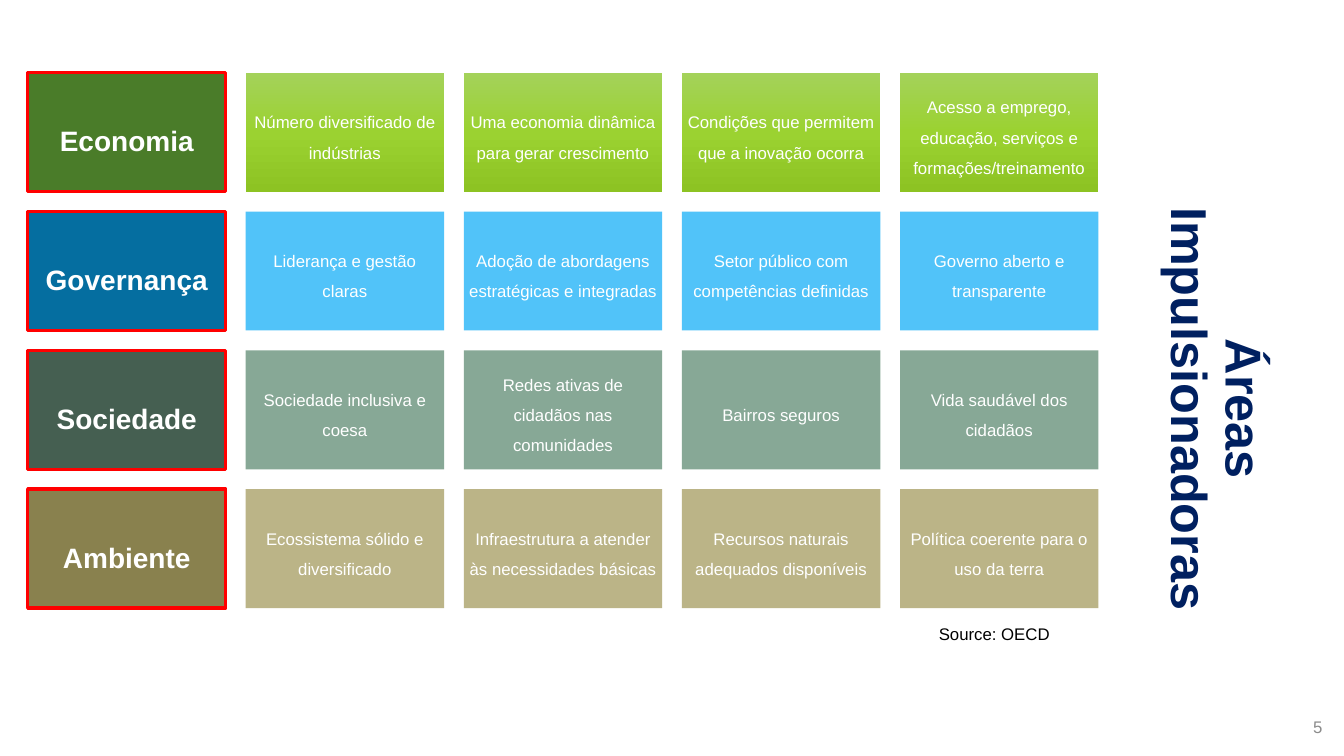
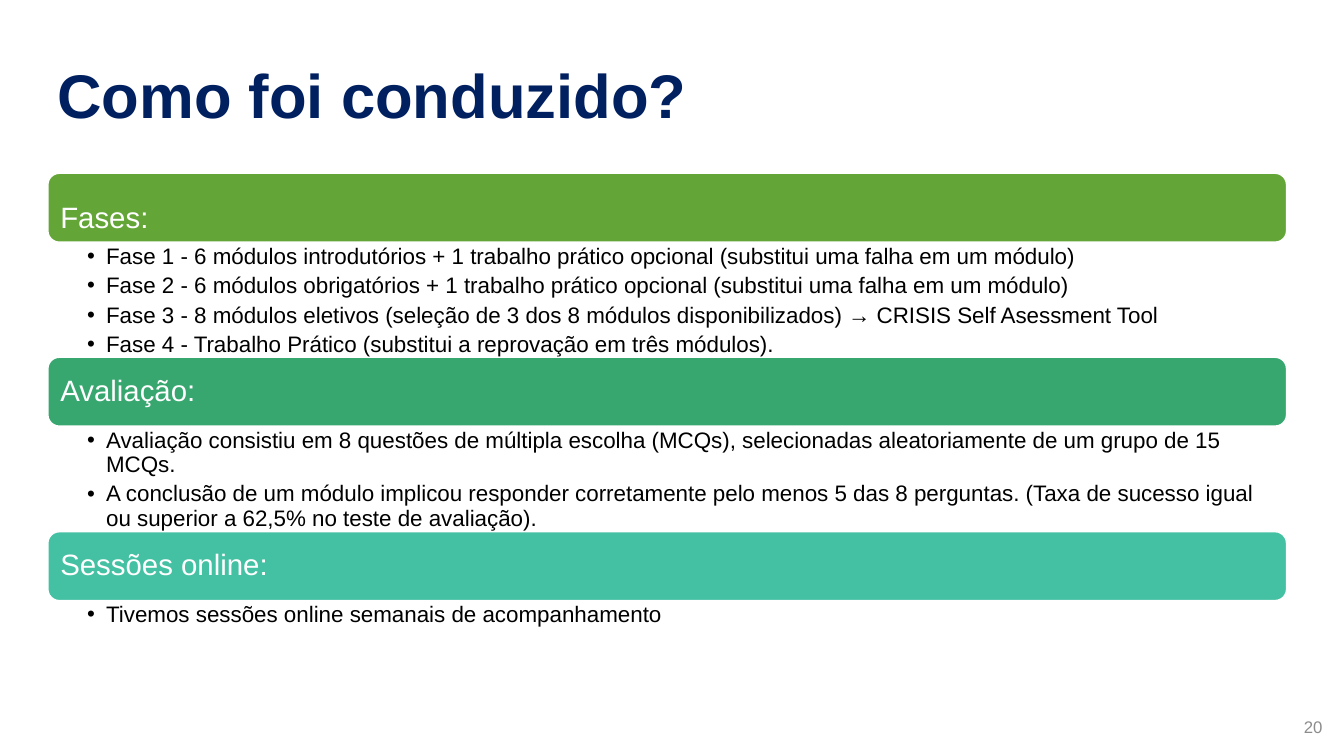
"""Build two slides: a grid of driving areas and the phases of a course."""
import copy
from dataclasses import dataclass
from typing import Optional, Sequence

import pptx
import pptx.dml.color
import pptx.enum.shapes
import pptx.enum.text
import pptx.oxml
import pptx.oxml.ns
import pptx.presentation
import pptx.shapes.autoshape
import pptx.shapes.base
import pptx.slide
import pptx.text.text
import pptx.util

Pt = pptx.util.Pt
RGBColor = pptx.dml.color.RGBColor
Align = pptx.enum.text.PP_ALIGN
Anchor = pptx.enum.text.MSO_ANCHOR
ShapeType = pptx.enum.shapes.MSO_SHAPE

FONT = "Arial"
WHITE = RGBColor(0xFF, 0xFF, 0xFF)
BLACK = RGBColor(0x00, 0x00, 0x00)
NAVY = RGBColor(0x00, 0x20, 0x60)
GREY = RGBColor(0x8C, 0x8C, 0x8C)
RED = RGBColor(0xFF, 0x00, 0x00)
DARK_GREEN = RGBColor(0x4A, 0x7C, 0x29)
LIME_LIGHT = RGBColor(0xA4, 0xD2, 0x5A)
LIME = RGBColor(0x9B, 0xD2, 0x31)
LIME_DARK = RGBColor(0x8D, 0xC3, 0x23)
DARK_BLUE = RGBColor(0x05, 0x6E, 0xA0)
SKY = RGBColor(0x51, 0xC3, 0xF9)
DARK_SAGE = RGBColor(0x45, 0x5F, 0x51)
SAGE = RGBColor(0x87, 0xA8, 0x96)
DARK_SAND = RGBColor(0x89, 0x81, 0x4E)
SAND = RGBColor(0xBB, 0xB4, 0x87)
LEAF = RGBColor(0x63, 0xA5, 0x37)
EMERALD = RGBColor(0x37, 0xA7, 0x6F)
TURQUOISE = RGBColor(0x44, 0xC1, 0xA3)

GRID_LEFT, GRID_TOP = 19.7, 52
CELL_WIDTH, CELL_HEIGHT = 141.7, 85
COLUMN_STEP, ROW_STEP = 155.8, 99.1
BAR_LEFT, BAR_WIDTH, BAR_HEIGHT = 34.2, 884.8, 49.2


@dataclass(frozen=True)
class Box:
    """Position and size in points."""
    left: float
    top: float
    width: float
    height: float


@dataclass(frozen=True)
class TextStyle:
    """Look of the paragraphs in one text frame."""
    size: float
    color: RGBColor
    bold: bool = False
    align: Align = Align.LEFT
    line_spacing: float = 1.0
    space_after: float = 0
    bullet: bool = False


@dataclass(frozen=True)
class Area:
    """One row of the grid, with a heading and its drivers."""
    name: str
    dark: RGBColor
    fills: Sequence[RGBColor]
    drivers: Sequence[str]


@dataclass(frozen=True)
class Section:
    """A coloured bar with the list below it."""
    heading: str
    color: RGBColor
    top: float
    list_height: float
    items: Sequence[str]
    line_spacing: float = 0.9


AREAS = (
    Area("Economia", DARK_GREEN, (LIME_LIGHT, LIME, LIME_DARK), (
        "Número diversificado de indústrias",
        "Uma economia dinâmica para gerar crescimento",
        "Condições que permitem que a inovação ocorra",
        "Acesso a emprego, educação, serviços e formações/treinamento")),
    Area("Governança", DARK_BLUE, (SKY,), (
        "Liderança e gestão claras",
        "Adoção de abordagens estratégicas e integradas",
        "Setor público com competências definidas",
        "Governo aberto e transparente")),
    Area("Sociedade", DARK_SAGE, (SAGE,), (
        "Sociedade inclusiva e coesa",
        "Redes ativas de cidadãos nas comunidades",
        "Bairros seguros",
        "Vida saudável dos cidadãos")),
    Area("Ambiente", DARK_SAND, (SAND,), (
        "Ecossistema sólido e diversificado",
        "Infraestrutura a atender às necessidades básicas",
        "Recursos naturais adequados disponíveis",
        "Política coerente para o uso da terra")),
)

SECTIONS = (
    Section("Fases:", LEAF, 123.8, 82, (
        "Fase 1 - 6 módulos introdutórios + 1 trabalho prático opcional (substitui uma falha em um módulo)",
        "Fase 2 - 6 módulos obrigatórios + 1 trabalho prático opcional (substitui uma falha em um módulo)",
        "Fase 3 - 8 módulos eletivos (seleção de 3 dos 8 módulos disponibilizados) → CRISIS Self Asessment Tool",
        "Fase 4 - Trabalho Prático (substitui a reprovação em três módulos)."), 1.5),
    Section("Avaliação:", EMERALD, 255.2, 75.4, (
        "Avaliação consistiu em 8 questões de múltipla escolha (MCQs), selecionadas aleatoriamente "
        "de um grupo de 15 MCQs.",
        "A conclusão de um módulo implicou responder corretamente pelo menos 5 das 8 perguntas. "
        "(Taxa de sucesso igual ou superior a 62,5% no teste de avaliação).")),
    Section("Sessões online:", TURQUOISE, 379.8, 27.4, (
        "Tivemos sessões online semanais de acompanhamento",)),
)

AREA_STYLE = TextStyle(20, WHITE, True, Align.CENTER, 1.5, 8)
DRIVER_STYLE = TextStyle(12, WHITE, False, Align.CENTER, 1.5, 4.8)
LIST_STYLE = TextStyle(16, BLACK, line_spacing=0.9, space_after=3.8, bullet=True)


def place(shape: pptx.shapes.base.BaseShape, box: Box) -> None:
    """Move and size a shape."""
    shape.left, shape.top = Pt(box.left), Pt(box.top)
    shape.width, shape.height = Pt(box.width), Pt(box.height)


def add_bullet(paragraph: pptx.text.text._Paragraph) -> None:
    """Give a paragraph a hanging bullet on the second level."""
    paragraph.level = 1
    properties = paragraph._p.get_or_add_pPr()
    properties.set("marL", str(Pt(13.5)))
    properties.set("indent", str(-Pt(13.5)))
    for tag, name, value in (("a:buFont", "typeface", FONT), ("a:buChar", "char", "•")):
        element = pptx.oxml.parse_xml(f"<{tag} {pptx.oxml.ns.nsdecls('a')}/>")
        element.set(name, value)
        properties.append(element)


def write(text_frame: pptx.text.text.TextFrame, lines: Sequence[str], style: TextStyle,
          anchor: Anchor = Anchor.MIDDLE,
          insets: Sequence[float] = (7.2, 3.6, 7.2, 3.6)) -> None:
    """Fill a text frame with styled paragraphs."""
    text_frame.word_wrap = True
    text_frame.auto_size = pptx.enum.text.MSO_AUTO_SIZE.NONE
    text_frame.vertical_anchor = anchor
    (text_frame.margin_left, text_frame.margin_top,
     text_frame.margin_right, text_frame.margin_bottom) = map(Pt, insets)
    text_frame.text = "\n".join(lines)
    for paragraph in text_frame.paragraphs:
        paragraph.alignment = style.align
        paragraph.line_spacing = style.line_spacing
        paragraph.space_before = Pt(0)
        paragraph.space_after = Pt(style.space_after)
        if style.bullet:
            add_bullet(paragraph)
        for run in paragraph.runs:
            run.font.name = FONT
            run.font.size = Pt(style.size)
            run.font.bold = style.bold
            run.font.color.rgb = style.color


def fill_shape(shape: pptx.shapes.autoshape.Shape, colors: Sequence[RGBColor]) -> None:
    """Fill with one colour, or with a three-colour gradient from top to bottom."""
    if len(colors) == 1:
        shape.fill.solid()
        shape.fill.fore_color.rgb = colors[0]
        return
    shape.fill.gradient()
    shape.fill.gradient_angle = 270
    stop_list = shape.element.spPr.find(".//" + pptx.oxml.ns.qn("a:gsLst"))
    stop_list.insert(1, copy.deepcopy(stop_list[0]))
    for stop, color, position in zip(shape.fill.gradient_stops, colors, (0, 0.5, 1)):
        stop.color.rgb = color
        stop.position = position


def add_panel(slide: pptx.slide.Slide, kind: ShapeType, box: Box, colors: Sequence[RGBColor],
              text: str, style: TextStyle, inset: float,
              line: Optional[RGBColor] = None, line_width: float = 1) -> None:
    """Draw a filled shape with text in it."""
    shape = slide.shapes.add_shape(kind, 0, 0, 0, 0)
    place(shape, box)
    shape.shadow.inherit = False
    fill_shape(shape, colors)
    if line is None:
        shape.line.fill.background()
    else:
        shape.line.color.rgb = line
        shape.line.width = Pt(line_width)
    write(shape.text_frame, [text], style, insets=(inset,) * 4)


def add_label(slide: pptx.slide.Slide, box: Box, text: str, style: TextStyle) -> None:
    """Add a plain text box."""
    label = slide.shapes.add_textbox(0, 0, 0, 0)
    place(label, box)
    write(label.text_frame, [text], style)


def add_titled_slide(presentation: pptx.presentation.Presentation, layout_name: str, title: str,
                     box: Box, size: float, align: Align, number: str) -> pptx.slide.Slide:
    """Add a slide with its title and number."""
    layout = presentation.slide_layouts.get_by_name(layout_name)
    slide = presentation.slides.add_slide(layout)
    place(slide.shapes.title, box)
    write(slide.shapes.title.text_frame, [title], TextStyle(size, NAVY, True, align, 0.9))
    add_label(slide, Box(919.4, 504.7, 32.4, 28.8), number, TextStyle(12, GREY, align=Align.RIGHT))
    return slide


def build_areas(presentation: pptx.presentation.Presentation) -> None:
    """Build the grid of driving areas."""
    slide = add_titled_slide(presentation, "Title Only", "Áreas Impulsionadoras",
                             Box(682.6, 239.8, 370, 104.4), 36, Align.CENTER, "5")
    slide.shapes.title.rotation = 90
    for row, area in enumerate(AREAS):
        top = GRID_TOP + row * ROW_STEP
        add_panel(slide, ShapeType.RECTANGLE, Box(GRID_LEFT, top, CELL_WIDTH, CELL_HEIGHT),
                  (area.dark,), area.name, AREA_STYLE, 6, RED, 2.25)
        for column, driver in enumerate(area.drivers, start=1):
            box = Box(GRID_LEFT + column * COLUMN_STEP, top, CELL_WIDTH, CELL_HEIGHT)
            add_panel(slide, ShapeType.RECTANGLE, box, area.fills, driver, DRIVER_STYLE, 3.6)
    add_label(slide, Box(663.5, 441.5, 94.5, 21.8), "Source: OECD", TextStyle(12, BLACK))


def build_phases(presentation: pptx.presentation.Presentation) -> None:
    """Build the slide of phases, assessment and sessions."""
    slide = add_titled_slide(presentation, "Comparison", "Como foi conduzido?",
                             Box(33.8, 18, 722, 104.4), 44, Align.LEFT, "20")
    bodies = [shape for shape in slide.placeholders if shape.placeholder_format.idx > 0]
    for section, body in zip(SECTIONS, bodies):
        bar = Box(BAR_LEFT, section.top, BAR_WIDTH, BAR_HEIGHT)
        style = TextStyle(21, WHITE, line_spacing=section.line_spacing, space_after=8.4)
        add_panel(slide, ShapeType.ROUNDED_RECTANGLE, bar, (section.color,),
                  section.heading, style, 6.5, WHITE)
        place(body, Box(BAR_LEFT, section.top + BAR_HEIGHT, BAR_WIDTH, section.list_height))
        write(body.text_frame, section.items, LIST_STYLE, Anchor.TOP, (28.1, 2, 11.5, 2))
    for unused in bodies[len(SECTIONS):]:
        unused.element.getparent().remove(unused.element)


def main() -> None:
    """Build and save the presentation."""
    presentation = pptx.Presentation()
    presentation.slide_width, presentation.slide_height = Pt(960), Pt(540)
    build_areas(presentation)
    build_phases(presentation)
    presentation.save("out.pptx")


if __name__ == "__main__":
    main()
